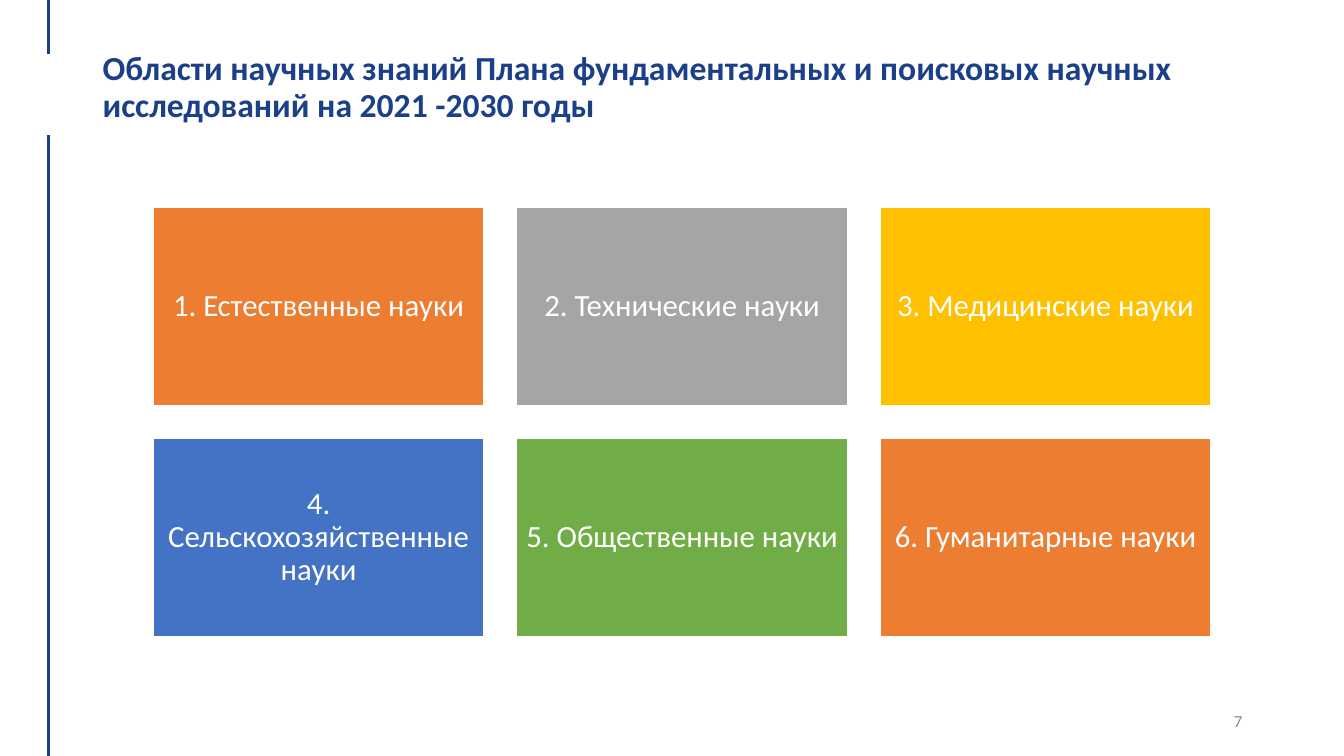
from lxml import etree
from pptx import Presentation
from pptx import util as u
from pptx.dml.color import RGBColor
from pptx.enum import shapes, text
from pptx.oxml import ns

NAVY, WHITE, GRAY = "1B4089", "FFFFFF", "8C8C8C"
ORANGE, SILVER, GOLD, BLUE, GREEN = "ED7D31", "A5A5A5", "FFC000", "4472C4", "70AD47"


def color(value):
    return RGBColor.from_string(value)


def write(shape, content, size, fill, bold=False, align=text.PP_ALIGN.LEFT,
          spacing=1.0, inset=(0.1, 0.05)):
    frame = shape.text_frame
    frame.word_wrap = True
    frame.vertical_anchor = text.MSO_ANCHOR.MIDDLE
    frame.margin_left = frame.margin_right = u.Inches(inset[0])
    frame.margin_top = frame.margin_bottom = u.Inches(inset[1])
    paragraph = frame.paragraphs[0]
    paragraph.alignment = align
    paragraph.line_spacing = spacing
    run = paragraph.add_run()
    run.text = content
    run.font.name = "Calibri"
    run.font.size = u.Pt(size)
    run.font.bold = bold
    run.font.color.rgb = color(fill)


class SlideBuilder:
    def __init__(self, slide):
        self.slide = slide

    def line(self, x, top, bottom):
        connector = self.slide.shapes.add_connector(
            shapes.MSO_CONNECTOR.STRAIGHT,
            u.Inches(x), u.Inches(top), u.Inches(x), u.Inches(bottom))
        connector.line.color.rgb = color(NAVY)
        connector.line.width = u.Pt(2)
        etree.SubElement(connector._element.spPr, ns.qn("a:effectLst"))

    def label(self, box, content, **style):
        shape = self.slide.shapes.add_textbox(*map(u.Inches, box))
        write(shape, content, **style)

    def tile(self, box, content, fill):
        shape = self.slide.shapes.add_shape(
            shapes.MSO_SHAPE.RECTANGLE, *map(u.Inches, box))
        shape.shadow.inherit = False
        shape.fill.solid()
        shape.fill.fore_color.rgb = color(fill)
        shape.line.color.rgb = color(WHITE)
        shape.line.width = u.Pt(1)
        write(shape, content, 22, WHITE, align=text.PP_ALIGN.CENTER,
              spacing=0.9, inset=(0.09, 0.09))


def main():
    presentation = Presentation()
    presentation.slide_width = u.Inches(13.33)
    presentation.slide_height = u.Inches(7.5)
    builder = SlideBuilder(
        presentation.slides.add_slide(presentation.slide_layouts[6]))

    # Vertical rule, broken beside the title
    builder.line(0.48, 1.34, 7.5)
    builder.line(0.48, 0, 0.54)

    # Title and page number
    builder.label(
        (0.92, 0.4, 11.5, 0.95),
        "Области научных знаний Плана фундаментальных и поисковых научных "
        "исследований на 2021 -2030 годы",
        size=24, fill=NAVY, bold=True, spacing=0.9)
    builder.label((9.42, 6.95, 3, 0.4), "7", size=12, fill=GRAY,
                  align=text.PP_ALIGN.RIGHT)

    # Fields of science, three to a row
    fields = [
        ("Естественные", ORANGE), ("Технические", SILVER), ("Медицинские", GOLD),
        ("Сельскохозяйственные", BLUE), ("Общественные", GREEN),
        ("Гуманитарные", ORANGE),
    ]
    width, height = 3.28, 1.97
    for index, (field, fill) in enumerate(fields):
        row, column = divmod(index, 3)
        box = (1.52 + column * 3.605, 2.06 + row * 2.29, width, height)
        builder.tile(box, f"{index + 1}. {field} науки", fill)

    presentation.save("out.pptx")


if __name__ == "__main__":
    main()
